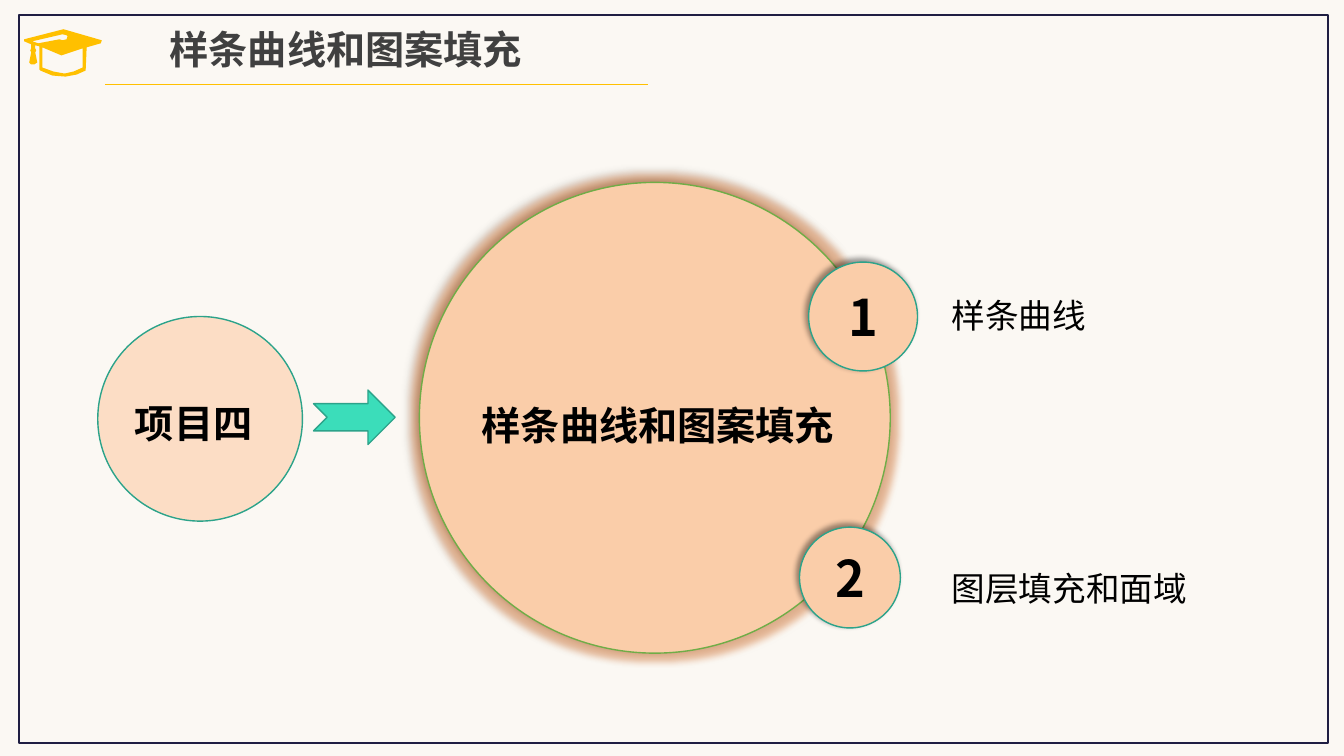
from lxml.etree import SubElement
from pptx import Presentation
from pptx.dml.color import RGBColor
from pptx.enum.shapes import MSO_CONNECTOR, MSO_SHAPE as Shape
from pptx.enum.text import MSO_ANCHOR as Anchor, MSO_AUTO_SIZE as AutoSize, PP_ALIGN as Align
from pptx.oxml.ns import qn
from pptx.util import Inches, Pt

FONT = "Noto Sans CJK SC"
CREAM = RGBColor(0xFB, 0xF8, 0xF3)
NAVY = RGBColor(0x1F, 0x1E, 0x42)
GRAY = RGBColor(0x40, 0x40, 0x40)
BLACK = RGBColor(0, 0, 0)
GOLD = RGBColor(0xFF, 0xC0, 0x00)
PEACH = RGBColor(0xFA, 0xCD, 0xA9)
PALE_PEACH = RGBColor(0xFC, 0xDD, 0xC5)
ORANGE = RGBColor(0xED, 0x7D, 0x31)
GREEN = RGBColor(0x70, 0xAD, 0x47)
TEAL = RGBColor(0x2C, 0xA3, 0x8A)
MINT = RGBColor(0x3B, 0xDD, 0xBA)

# Graduation cap outlines, in hundredths of an inch
CAP = [
    [(82, 48), (82, 67), (73, 71), (64, 73), (53, 71), (42, 67), (42, 47), (61, 55)],
    [(31, 52), (29, 62), (31, 63.5), (34, 63.5), (37, 62), (35, 52), (36, 50), (35, 48),
     (35, 45), (39, 46), (39, 69), (40, 70), (52, 75), (65, 76.5), (76, 74), (85, 70),
     (86, 47), (100, 43), (101, 40), (63, 29), (24, 39), (24, 41), (31, 44), (31, 48),
     (30.5, 50)],
    [(38, 43), (32, 41), (58, 35), (62, 34), (66, 35), (67, 36.5), (66, 39), (62, 40),
     (59, 39)],
]


class SlideBuilder:
    def __init__(self, prs):
        self.s = prs.slides.add_slide(prs.slide_layouts[5])
        self.s.background.fill.solid()
        self.s.background.fill.fore_color.rgb = CREAM

    def format_text(self, tf, text, size, color=BLACK, bold=False, align=None, spacing=None):
        tf.text = text
        p = tf.paragraphs[0]
        p.alignment = align
        p.line_spacing = spacing
        font = p.runs[0].font
        font.name, font.size, font.bold = FONT, Pt(size), bold
        font.color.rgb = color
        SubElement(font._element, qn("a:ea"), typeface=FONT)

    def title(self, text, left, top, width, height):
        sp = self.s.shapes.title
        sp.left, sp.top, sp.width, sp.height = map(Inches, (left, top, width, height))
        tf = sp.text_frame
        tf.word_wrap = False
        tf.auto_size = AutoSize.NONE
        tf.vertical_anchor = Anchor.TOP
        self.format_text(tf, text, 28, GRAY, True, Align.CENTER, Pt(30))

    def label(self, text, left, top, width, height, size, bold=False):
        box = self.s.shapes.add_textbox(*map(Inches, (left, top, width, height)))
        box.text_frame.word_wrap = True
        self.format_text(box.text_frame, text, size, bold=bold, spacing=1.2)

    def shape(self, kind, left, top, width, height, fill=None, line=TEAL):
        sp = self.s.shapes.add_shape(kind, *map(Inches, (left, top, width, height)))
        sp.shadow.inherit = False
        if fill is None:
            sp.fill.background()
        else:
            sp.fill.solid()
            sp.fill.fore_color.rgb = fill
        sp.line.color.rgb = line
        sp.line.width = Pt(1)
        return sp

    def circle(self, left, top, size, fill=PEACH, line=TEAL, glow=False, shadow=True):
        sp = self.shape(Shape.FLOWCHART_CONNECTOR, left, top, size, size, fill, line)
        effects = sp._element.spPr.find(qn("a:effectLst"))
        if glow:
            self.effect(effects, "a:glow", ORANGE, rad=Pt(10))
        if shadow:
            self.effect(effects, "a:outerShdw", BLACK, blurRad=Pt(4), dist=Pt(3),
                        dir=225 * 60000, algn="br", rotWithShape=0)
        return sp

    def effect(self, effects, tag, color, **attributes):
        """Add a 40% opaque glow or shadow to an effect list."""
        node = SubElement(effects, qn(tag), {k: str(v) for k, v in attributes.items()})
        rgb = SubElement(node, qn("a:srgbClr"), val=str(color))
        SubElement(rgb, qn("a:alpha"), val="40000")

    def badge(self, number, left, top, size):
        tf = self.circle(left, top, size).text_frame
        tf.vertical_anchor = Anchor.MIDDLE
        self.format_text(tf, number, 36, bold=True, align=Align.CENTER)

    def rule(self, left, right, y):
        line = self.s.shapes.add_connector(
            MSO_CONNECTOR.STRAIGHT, *map(Inches, (left, y, right, y)))
        line.line.color.rgb = GOLD
        line.line.width = Pt(0.5)
        SubElement(line._element.spPr, qn("a:effectLst"))

    def icon(self, contours, color):
        first, *others = contours
        builder = self.s.shapes.build_freeform(*first[0], scale=Inches(0.01))
        builder.add_line_segments(first[1:])
        for contour in others:
            builder.move_to(*contour[0])
            builder.add_line_segments(contour[1:])
        sp = builder.convert_to_shape()
        sp.shadow.inherit = False
        sp.fill.solid()
        sp.fill.fore_color.rgb = color
        sp.line.fill.background()


def main():
    prs = Presentation()
    prs.slide_width, prs.slide_height = Inches(13.33), Inches(7.5)
    slide = SlideBuilder(prs)
    topic = "样条曲线和图案填充"

    slide.shape(Shape.RECTANGLE, 0.19, 0.15, 12.98, 7.22, line=NAVY)
    slide.title(topic, 1.56, 0.25, 3.74, 0.52)
    slide.rule(1.04, 6.43, 0.84)
    slide.icon(CAP, GOLD)

    slide.circle(0.97, 3.14, 2.03, PALE_PEACH, shadow=False)
    slide.circle(4.16, 1.81, 4.67, line=GREEN, glow=True)
    slide.shape(Shape.NOTCHED_RIGHT_ARROW, 3.11, 3.87, 0.81, 0.54, MINT)
    slide.label("项目四", 1.24, 3.82, 1.47, 0.83, 28, bold=True)
    slide.label(topic, 4.68, 3.84, 3.76, 1.37, 28, bold=True)

    sections = [
        ("样条曲线", (8.02, 2.6, 1.08), 2.8),
        ("图层填充和面域", (7.93, 5.23, 1), 5.51),
    ]
    for number, (text, place, top) in enumerate(sections, 1):
        slide.badge(str(number), *place)
        slide.label(text, 9.34, top, 3.39, 0.83, 24)

    prs.save("out.pptx")


if __name__ == "__main__":
    main()
